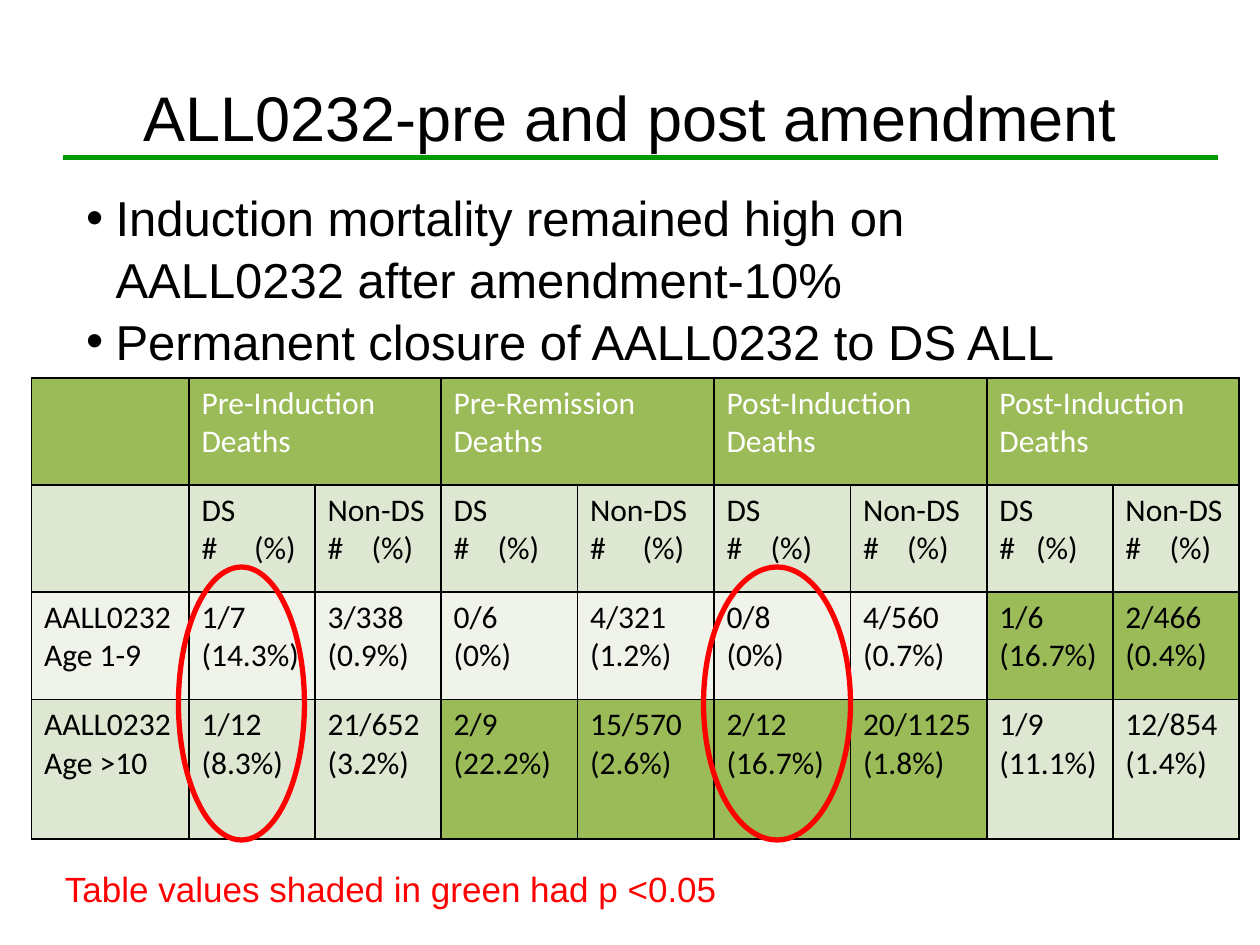
from dataclasses import dataclass

import pptx
import pptx.dml.color
import pptx.enum.shapes
import pptx.enum.text
import pptx.oxml
import pptx.oxml.ns
import pptx.util

Color = pptx.dml.color.RGBColor.from_string


@dataclass(frozen=True)
class Theme:
    black: str = "000000"
    white: str = "FFFFFF"
    red: str = "FF0000"
    rule: str = "009900"
    green: str = "9BBB59"
    band: str = "DEE7D1"
    pale: str = "EFF3EA"
    heading_font: str = "Arial"
    table_font: str = "Calibri"
    title_size: int = 36
    body_size: int = 28
    note_size: int = 20
    table_size: int = 18


@dataclass(frozen=True)
class Box:
    """A place on the slide's grid of 120 columns by 90 rows."""
    column: float
    row: float
    columns: float
    rows: float

    def lengths(self) -> tuple:
        return tuple(map(grid, (self.column, self.row, self.columns, self.rows)))


@dataclass(frozen=True)
class Trial:
    label: str
    fill: str
    values: tuple
    significant: range  # table columns shaded for p < 0.05


THEME = Theme()
TITLE = Box(6, 3.6, 108, 15)
BULLETS = Box(7, 17, 102, 18.1)
TABLE = Box(3, 36, 115, 43.9)
NOTE = Box(5, 82, 75, 5.3)
RINGS = (Box(17, 54, 12, 26), Box(67, 54, 14, 26))
COLUMNS = (15, 12, 12, 13, 13, 13, 13, 12, 12)
ROWS = (10.2, 10.2, 10.2, 13.3)
PERIODS = ("Pre-Induction", "Pre-Remission", "Post-Induction", "Post-Induction")
PERCENT_TABS = (5, 4.2, 4.2, 5, 4.2, 4.2, 3.5, 4.2)
TRIALS = (
    Trial("AALL0232\nAge 1-9", THEME.pale,
          ("1/7\n(14.3%)", "3/338\n(0.9%)", "0/6\n(0%)", "4/321\n(1.2%)",
           "0/8\n(0%)", "4/560\n(0.7%)", "1/6\n(16.7%)", "2/466\n(0.4%)"),
          range(7, 9)),
    Trial("AALL0232\nAge >10", THEME.band,
          ("1/12\n(8.3%)", "21/652\n(3.2%)", "2/9\n(22.2%)", "15/570\n(2.6%)",
           "2/12\n(16.7%)", "20/1125\n(1.8%)", "1/9\n(11.1%)", "12/854\n(1.4%)"),
          range(3, 7)),
)


def grid(units: float) -> int:
    return pptx.util.Inches(units / 12)


def place(shape, box: Box) -> None:
    names = ("left", "top", "width", "height")
    for name, length in zip(names, box.lengths()):
        setattr(shape, name, length)


def format_text(frame, font_name: str, size: int, color: str) -> None:
    settings = {"name": font_name, "size": pptx.util.Pt(size)}
    for paragraph in frame.paragraphs:
        for run in paragraph.runs:
            for name, value in settings.items():
                setattr(run.font, name, value)
            run.font.color.rgb = Color(color)


def add_xml(parent, markup: str) -> None:
    namespace = pptx.oxml.ns.nsdecls("a")
    parent.append(pptx.oxml.parse_xml(markup.replace(" ", f" {namespace} ", 1)))


def fill_cell(cell, text: str, fill: str, color: str) -> None:
    cell.text = text
    cell.fill.solid()
    cell.fill.fore_color.rgb = Color(fill)
    format_text(cell.text_frame, THEME.table_font, THEME.table_size, color)
    properties = cell._tc.get_or_add_tcPr()
    for position, side in enumerate(("lnL", "lnR", "lnT", "lnB")):
        add_xml(properties, f'<a:{side} w="12700"><a:solidFill><a:srgbClr '
                            f'val="{THEME.black}"/></a:solidFill></a:{side}>')
        properties.insert(position, properties[-1])


def set_percent_tab(cell, units: float) -> None:
    properties = cell.text_frame.paragraphs[1]._p.get_or_add_pPr()
    add_xml(properties, f'<a:tabLst ><a:tab pos="{grid(units)}" algn="l"/></a:tabLst>')


def add_deaths_table(slide) -> None:
    frame = slide.shapes.add_table(len(ROWS), len(COLUMNS), *TABLE.lengths())
    deaths = frame.table
    for column, units in zip(deaths.columns, COLUMNS):
        column.width = grid(units)
    for row, units in zip(deaths.rows, ROWS):
        row.height = grid(units)

    for index in range(len(COLUMNS)):
        starts_period = index % 2 == 1
        heading = f"{PERIODS[index // 2]} Deaths" if starts_period else ""
        fill_cell(deaths.cell(0, index), heading, THEME.green, THEME.white)
        group = "DS" if starts_period else "Non-DS"
        subheading = f"{group}\n#\t(%)" if index else ""
        fill_cell(deaths.cell(1, index), subheading, THEME.band, THEME.black)
        if index:
            set_percent_tab(deaths.cell(1, index), PERCENT_TABS[index - 1])
        if starts_period:
            deaths.cell(0, index).merge(deaths.cell(0, index + 1))

    for row, trial in enumerate(TRIALS, start=2):
        for index, text in enumerate((trial.label, *trial.values)):
            fill = THEME.green if index in trial.significant else trial.fill
            fill_cell(deaths.cell(row, index), text, fill, THEME.black)


def add_title(slide) -> None:
    title = slide.shapes.title
    place(title, TITLE)
    title.text_frame.text = "ALL0232-pre and post amendment"
    title.text_frame.vertical_anchor = pptx.enum.text.MSO_ANCHOR.MIDDLE
    title.text_frame.paragraphs[0].alignment = pptx.enum.text.PP_ALIGN.CENTER
    format_text(title.text_frame, THEME.heading_font, THEME.title_size, THEME.black)


def add_bullets(slide) -> None:
    body = slide.placeholders[1]
    place(body, BULLETS)
    body.text_frame.auto_size = pptx.enum.text.MSO_AUTO_SIZE.NONE
    body.text_frame.text = ("Induction mortality remained high on AALL0232 after "
                            "amendment-10%\nPermanent closure of AALL0232 to DS ALL")
    hanging = grid(2.8)
    for paragraph in body.text_frame.paragraphs:
        properties = paragraph._p.get_or_add_pPr()
        properties.set("marL", str(hanging))
        properties.set("indent", str(-hanging))
        add_xml(properties, '<a:buChar char="•"/>')
        paragraph.space_before = pptx.util.Pt(0)
        paragraph.line_spacing = 1.05
    format_text(body.text_frame, THEME.heading_font, THEME.body_size, THEME.black)


def add_note(slide) -> None:
    note = slide.shapes.add_textbox(*NOTE.lengths()).text_frame
    note.word_wrap = True
    note.text = "Table values shaded in green had p <0.05"
    format_text(note, THEME.heading_font, THEME.note_size, THEME.red)


def set_line(shape, color: str) -> None:
    shape.line.color.rgb = Color(color)
    shape.line.width = pptx.util.Pt(3)


def add_title_rule(slide) -> None:
    rule = slide.shapes.add_connector(
        pptx.enum.shapes.MSO_CONNECTOR.STRAIGHT, grid(6), grid(15), grid(116), grid(15))
    set_line(rule, THEME.rule)
    add_xml(rule._element.spPr, "<a:effectLst />")


def add_ring(slide, box: Box) -> None:
    ring = slide.shapes.add_shape(pptx.enum.shapes.MSO_SHAPE.OVAL, *box.lengths())
    ring.shadow.inherit = False
    ring.fill.background()
    set_line(ring, THEME.red)


def main() -> None:
    deck = pptx.Presentation()
    deck.slide_width, deck.slide_height = grid(120), grid(90)
    slide = deck.slides.add_slide(deck.slide_layouts[1])
    add_title(slide)
    add_deaths_table(slide)
    add_bullets(slide)
    add_note(slide)
    add_title_rule(slide)
    for box in RINGS:
        add_ring(slide, box)
    deck.save("out.pptx")


if __name__ == "__main__":
    main()
